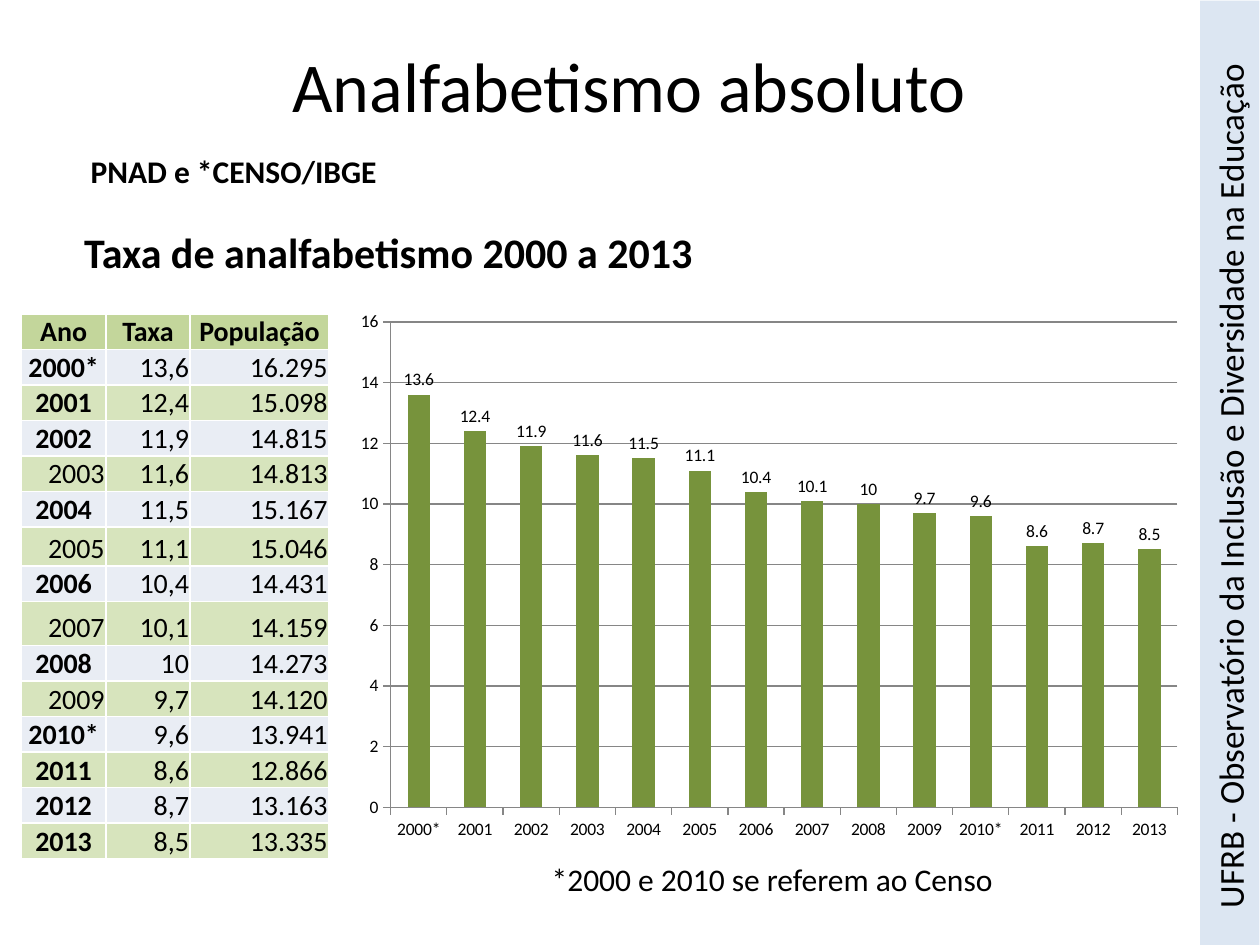
from dataclasses import dataclass
from lxml.etree import SubElement as Sub
from pptx import Presentation as Deck
from pptx.chart.data import CategoryChartData as Data
from pptx.dml.color import RGBColor as Rgb
from pptx.enum.chart import XL_CHART_TYPE as Kind, XL_LABEL_POSITION as Spot, XL_TICK_MARK as Tick
from pptx.enum.shapes import MSO_SHAPE as Form
from pptx.enum.text import MSO_ANCHOR as Anchor, MSO_AUTO_SIZE as Fit, PP_ALIGN as Align
from pptx.oxml.ns import qn
from pptx.util import Inches, Pt


@dataclass(frozen=True)
class Theme:
    face: str = "Calibri"
    ink: str = "000000"
    white: str = "FFFFFF"
    head: str = "C3D69B"
    even: str = "E9EDF4"
    odd: str = "D7E4BD"
    bar: str = "77933C"
    side: str = "DCE6F2"
    grid: str = "868686"
    title: int = 40
    sub: int = 24
    band: int = 20
    note: int = 18
    cell: int = 16
    tick: int = 10


def assign(obj, vals):
    for key, val in vals.items():
        setattr(obj, key, val)


def paint(fill, hue):
    fill.solid()
    fill.fore_color.rgb = Rgb.from_string(hue)


class Page:
    def __init__(self, slide, theme):
        self.slide = slide
        self.theme = theme

    def style(self, font, size, bold=False):
        assign(font, {"name": self.theme.face, "size": Pt(size), "bold": bold})
        font.color.rgb = Rgb.from_string(self.theme.ink)

    def label(self, frame, text, size, bold=False, align=Align.LEFT, **opts):
        assign(frame, opts)
        para = frame.paragraphs[0]
        para.alignment = align
        run = para.add_run()
        run.text = text
        self.style(run.font, size, bold)
        return para

    def title(self, text, box):
        shape = self.slide.shapes.title
        assign(shape, dict(zip(("left", "top", "width", "height"), map(Inches, box))))
        self.label(shape.text_frame, text, self.theme.title, align=Align.CENTER,
                   auto_size=Fit.NONE, vertical_anchor=Anchor.TOP, word_wrap=True)

    def text(self, text, box, size, bold=False, wrap=True, anchor=Anchor.TOP):
        shape = self.slide.shapes.add_textbox(*map(Inches, box))
        self.label(shape.text_frame, text, size, bold, word_wrap=wrap,
                   auto_size=Fit.SHAPE_TO_FIT_TEXT, vertical_anchor=anchor)

    def band(self, text, box):
        shape = self.slide.shapes.add_shape(Form.RECTANGLE, *map(Inches, box))
        shape.rotation = 270
        shape.shadow.inherit = False
        paint(shape.fill, self.theme.side)
        shape.line.fill.background()
        para = self.label(shape.text_frame, text, self.theme.band,
                          word_wrap=True, vertical_anchor=Anchor.MIDDLE)
        para._p.get_or_add_pPr().set("marL", str(Inches(0.2)))

    def cell(self, cell, text, hue, bold, align):
        edge = Inches(0.01)
        assign(cell, {"margin_left": edge, "margin_right": edge, "margin_top": edge,
                      "margin_bottom": 0, "vertical_anchor": Anchor.BOTTOM})
        self.label(cell.text_frame, text, self.theme.cell, bold, align)
        props = cell._tc.get_or_add_tcPr()
        for side in ("a:lnL", "a:lnR", "a:lnT", "a:lnB"):
            line = Sub(props, qn(side), w=str(Pt(1)))
            Sub(Sub(line, qn("a:solidFill")), qn("a:srgbClr"), val=self.theme.white)
        paint(cell.fill, hue)

    def table(self, rows, box, cols, highs, plain):
        table = self.slide.shapes.add_table(len(rows), len(cols), *map(Inches, box)).table
        for col, wide in zip(table.columns, cols):
            col.width = Inches(wide)
        for i, (row, high) in enumerate(zip(rows, highs)):
            table.rows[i].height = Inches(high)
            hue = self.theme.head if i == 0 else (self.theme.even, self.theme.odd)[(i - 1) % 2]
            for j, text in enumerate(row):
                bold = i == 0 or j == 0 and text not in plain
                self.cell(table.cell(i, j), text, hue, bold, Align.CENTER if bold else Align.RIGHT)

    def chart(self, name, cats, vals, box):
        data = Data()
        data.categories = cats
        data.add_series(name, vals)
        chart = self.slide.shapes.add_chart(Kind.COLUMN_CLUSTERED, *map(Inches, box), data).chart
        assign(chart, {"has_legend": False, "has_title": False})
        self.style(chart.font, self.theme.tick)
        plot = chart.plots[0]
        assign(plot, {"gap_width": 150, "vary_by_categories": False, "has_data_labels": True})
        assign(plot.data_labels, {"show_value": True, "number_format": "General",
                                  "number_format_is_linked": False, "position": Spot.OUTSIDE_END})
        self.style(plot.data_labels.font, self.theme.tick)
        paint(plot.series[0].format.fill, self.theme.bar)
        low, high = chart.category_axis, chart.value_axis
        assign(high, {"minimum_scale": 0, "maximum_scale": 16, "major_unit": 2,
                      "has_major_gridlines": True})
        for axis in (low, high):
            assign(axis, {"major_tick_mark": Tick.OUTSIDE, "minor_tick_mark": Tick.NONE})
            self.style(axis.tick_labels.font, self.theme.tick)
        for part in (low, high, high.major_gridlines):
            part.format.line.width = Pt(0.75)
            paint(part.format.line.fill, self.theme.grid)


def main():
    deck = Deck()
    assign(deck, {"slide_width": Inches(10), "slide_height": Inches(7.5)})
    theme = Theme()
    page = Page(deck.slides.add_slide(deck.slide_layouts[5]), theme)

    years = [f"{y}*" if y in (2000, 2010) else str(y) for y in range(2000, 2014)]
    rates = [13.6, 12.4, 11.9, 11.6, 11.5, 11.1, 10.4, 10.1, 10, 9.7, 9.6, 8.6, 8.7, 8.5]
    people = [16295, 15098, 14815, 14813, 15167, 15046, 14431,
              14159, 14273, 14120, 13941, 12866, 13163, 13335]
    rows = [("Ano", "Taxa", "População")]
    rows += [(y, f"{r:g}".replace(".", ","), f"{p:,}".replace(",", "."))
             for y, r, p in zip(years, rates, people)]
    highs = [{6: 0.31, 8: 0.35}.get(i, 0.28) for i in range(len(rows))]

    page.table(rows, (0.17, 2.49, 2.44, 4.26), (0.67, 0.67, 1.1), highs,
               {"2003", "2005", "2007", "2009"})
    page.chart("Taxa", years, rates, (2.73, 2.39, 6.75, 4.36))
    page.text("Taxa de analfabetismo 2000 a 2013", (0.57, 1.75, 5.86, 0.5),
              theme.sub, bold=True, anchor=Anchor.MIDDLE)
    page.text("*2000 e 2010 se referem ao Censo", (4.28, 6.78, 3.75, 0.4),
              theme.note, wrap=False)
    page.title("Analfabetismo absoluto", (0.57, 0.29, 8.84, 0.77))
    page.text("PNAD e *CENSO/IBGE", (0.62, 1.16, 3.91, 0.4), theme.note, bold=True)
    page.band("UFRB - Observatório da Inclusão e Diversidade na Educação",
              (6.01, 3.52, 7.5, 0.47))
    deck.save("out.pptx")


if __name__ == "__main__":
    main()
